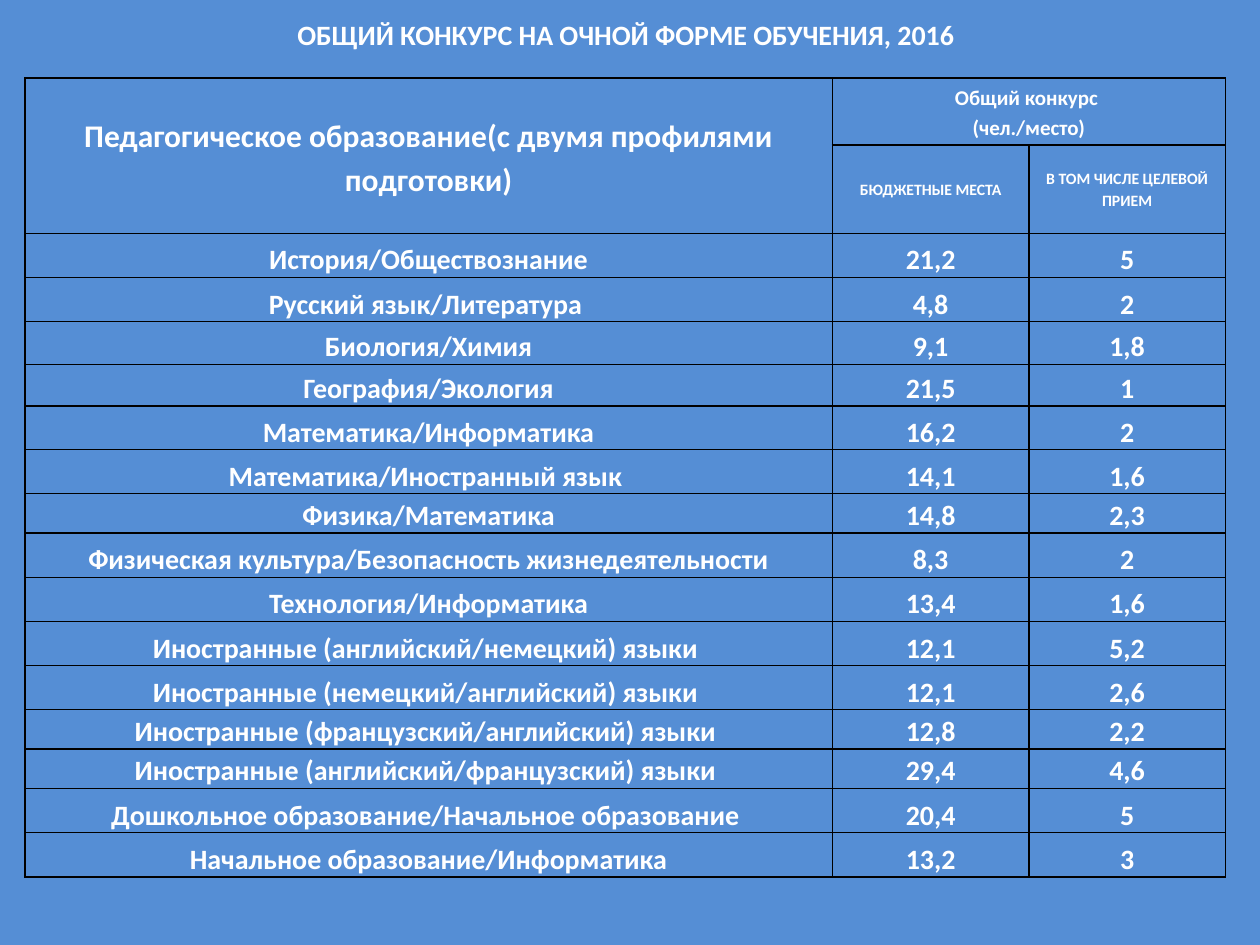
from lxml import etree
from pptx import Presentation
from pptx.dml.color import RGBColor
from pptx.enum.text import MSO_ANCHOR, PP_ALIGN
from pptx.oxml.ns import qn
from pptx.util import Cm, Pt

CENTER = PP_ALIGN.CENTER
MIDDLE, BOTTOM = MSO_ANCHOR.MIDDLE, MSO_ANCHOR.BOTTOM
BLUE = RGBColor(0x55, 0x8E, 0xD5)
WHITE = RGBColor(0xFF, 0xFF, 0xFF)
BLACK = RGBColor(0, 0, 0)
TITLE_ONLY = 5

TITLE = "ОБЩИЙ КОНКУРС НА ОЧНОЙ ФОРМЕ ОБУЧЕНИЯ, 2016"
# row, column, last row, last column, text, size
HEADERS = [
    (0, 0, 1, 0, "Педагогическое образование(с двумя профилями подготовки)", 18),
    (0, 1, 0, 2, "Общий конкурс \n(чел./место)", 12),
    (1, 1, 1, 1, "БЮДЖЕТНЫЕ МЕСТА", 9),
    (1, 2, 1, 2, "В ТОМ ЧИСЛЕ ЦЕЛЕВОЙ ПРИЕМ", 9),
]
HEADER_HEIGHTS = [1.35, 1.78]
# programme, budget places, targeted admission, row height in cm
PROGRAMMES = [
    ("История/Обществознание", "21,2", "5", 0.89),
    ("Русский язык/Литература ", "4,8", "2", 0.89),
    ("Биология/Химия", "9,1", "1,8", 0.86),
    ("География/Экология", "21,5", "1", 0.84),
    ("Математика/Информатика", "16,2", "2", 0.88),
    ("Математика/Иностранный язык ", "14,1", "1,6", 0.89),
    ("Физика/Математика", "14,8", "2,3", 0.79),
    ("Физическая культура/Безопасность жизнедеятельности", "8,3", "2", 0.89),
    ("Технология/Информатика", "13,4", "1,6", 0.89),
    ("Иностранные (английский/немецкий) языки ", "12,1", "5,2", 0.89),
    ("Иностранные (немецкий/английский) языки ", "12,1", "2,6", 0.89),
    ("Иностранные (французский/английский) языки ", "12,8", "2,2", 0.79),
    ("Иностранные (английский/французский) языки ", "29,4", "4,6", 0.79),
    ("Дошкольное образование/Начальное образование ", "20,4", "5", 0.89),
    ("Начальное образование/Информатика", "13,2", "3", 0.89),
]
COLUMN_WIDTHS = [16.28, 3.96, 3.96]


class SlideBuilder:
    font_name = "Calibri"
    text_color = WHITE
    border_color = BLACK
    border_width = Pt(1)

    def __init__(self, slide):
        self.slide = slide

    def background(self, color):
        fill = self.slide.background.fill
        fill.solid()
        fill.fore_color.rgb = color

    def style(self, para, size):
        para.alignment = CENTER
        para.font.name = self.font_name
        para.font.size = Pt(size)
        para.font.bold = True
        para.font.color.rgb = self.text_color

    def title(self, text, left, top, width, height, size):
        box = self.slide.shapes.title
        box.left, box.top, box.width, box.height = map(Cm, (left, top, width, height))
        box.text_frame.text = text
        box.text_frame.vertical_anchor = MIDDLE
        self.style(box.text_frame.paragraphs[0], size)

    def table(self, left, top, widths, heights):
        """Add an unfilled grid with borders on every cell."""
        frame = self.slide.shapes.add_table(
            len(heights), len(widths), Cm(left), Cm(top),
            Cm(sum(widths)), Cm(sum(heights)))
        table = frame.table
        table.first_row = table.horz_banding = False
        for column, width in zip(table.columns, widths):
            column.width = Cm(width)
        for row, height in zip(table.rows, heights):
            row.height = Cm(height)
        for cell in table.iter_cells():
            self.borders(cell)
            cell.fill.background()
            cell.margin_left = cell.margin_right = Cm(0.13)
            cell.margin_top = cell.margin_bottom = 0
        return table

    def borders(self, cell):
        properties = cell._tc.get_or_add_tcPr()
        for side in ("a:lnL", "a:lnR", "a:lnT", "a:lnB"):
            line = etree.SubElement(properties, qn(side), w=str(self.border_width))
            fill = etree.SubElement(line, qn("a:solidFill"))
            etree.SubElement(fill, qn("a:srgbClr"), val=str(self.border_color))

    def cell_text(self, cell, text, size, anchor):
        cell.vertical_anchor = anchor
        para = cell.text_frame.paragraphs[0]
        para.text = text.replace("\n", "\v")
        para.line_spacing = 1.15
        para.space_after = Pt(10)
        self.style(para, size)


def main():
    deck = Presentation()
    deck.slide_width, deck.slide_height = Cm(25.4), Cm(19.05)
    page = SlideBuilder(deck.slides.add_slide(deck.slide_layouts[TITLE_ONLY]))
    page.background(BLUE)
    page.title(TITLE, 1.19, -0.23, 22.86, 1.83, size=16)

    heights = HEADER_HEIGHTS + [height for *_, height in PROGRAMMES]
    table = page.table(0.5, 1.57, COLUMN_WIDTHS, heights)
    for row, column, last_row, last_column, text, size in HEADERS:
        cell = table.cell(row, column)
        if (row, column) != (last_row, last_column):
            cell.merge(table.cell(last_row, last_column))
        page.cell_text(cell, text, size, MIDDLE)
    for row, (*values, _) in enumerate(PROGRAMMES, start=len(HEADER_HEIGHTS)):
        for column, text in enumerate(values):
            page.cell_text(table.cell(row, column), text, 16, BOTTOM)

    deck.save("out.pptx")


if __name__ == "__main__":
    main()
